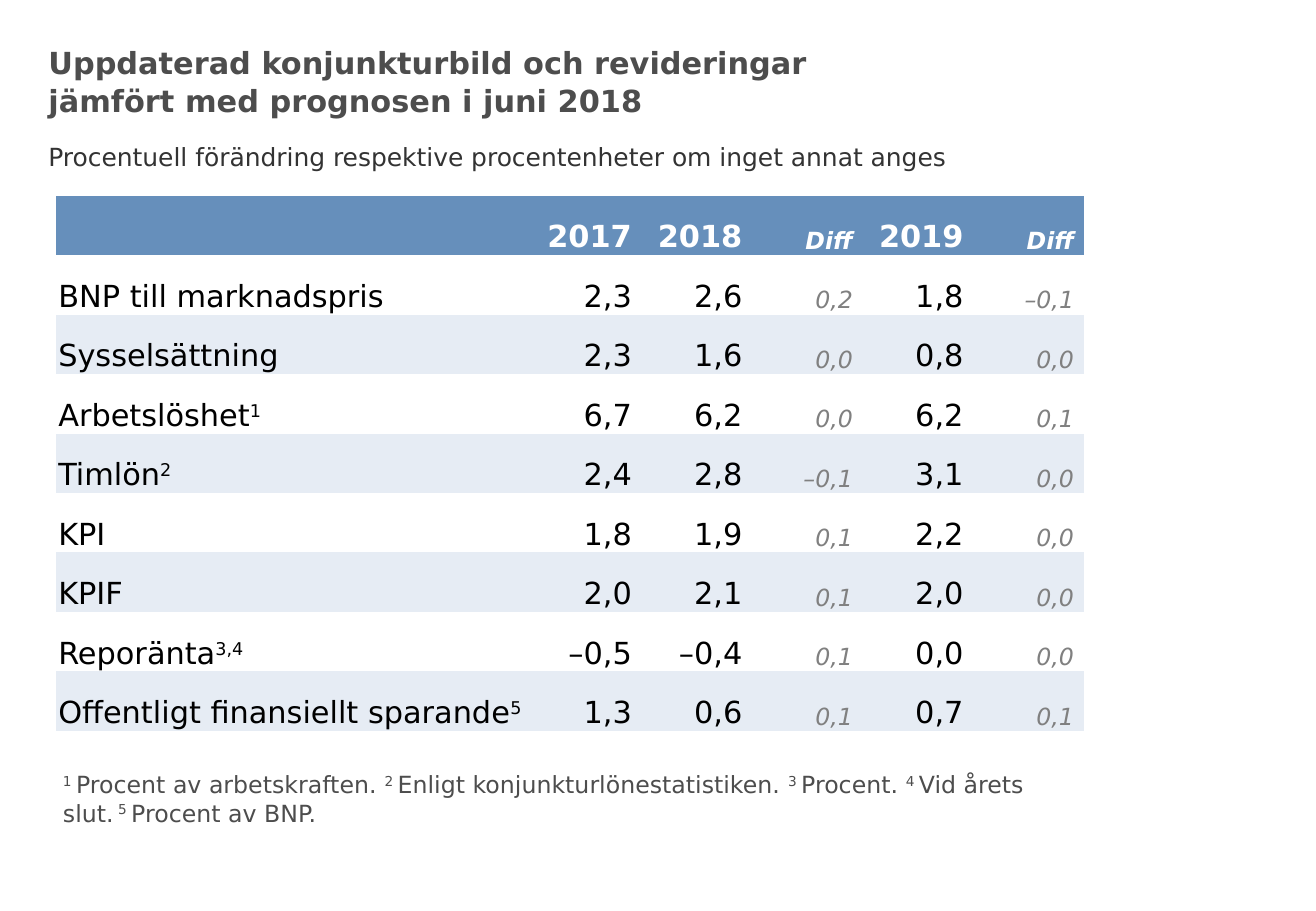
from pptx import Presentation
from pptx.dml.color import RGBColor
from pptx.enum.text import MSO_ANCHOR, PP_ALIGN
from pptx.oxml.ns import qn
from pptx.util import Pt

FONT = "DejaVu Sans"
COLORS = {
    "title": "4D4D4D", "subtitle": "333333", "note": "4D4D4D",
    "header": "668FBB", "header_text": "FFFFFF",
    "plain": "FFFFFF", "band": "E6ECF4",
    "value": "000000", "diff": "808080",
}
TITLE = "Uppdaterad konjunkturbild och revideringar jämfört med prognosen i juni 2018"
SUBTITLE = "Procentuell förändring respektive procentenheter om inget annat anges"
HEADER = ("", "2017", "2018", "Diff", "2019", "Diff")
# Label, superscript note number, values
ROWS = [
    ("BNP till marknadspris", "", "2,3", "2,6", "0,2", "1,8", "–0,1"),
    ("Sysselsättning", "", "2,3", "1,6", "0,0", "0,8", "0,0"),
    ("Arbetslöshet", "1", "6,7", "6,2", "0,0", "6,2", "0,1"),
    ("Timlön", "2", "2,4", "2,8", "–0,1", "3,1", "0,0"),
    ("KPI", "", "1,8", "1,9", "0,1", "2,2", "0,0"),
    ("KPIF", "", "2,0", "2,1", "0,1", "2,0", "0,0"),
    ("Reporänta", "3,4", "–0,5", "–0,4", "0,1", "0,0", "0,0"),
    ("Offentligt finansiellt sparande", "5", "1,3", "0,6", "0,1", "0,7", "0,1"),
]
# Superscript mark, note text
NOTES = [
    ("1 ", "Procent av arbetskraften. "),
    ("2 ", "Enligt konjunkturlönestatistiken. "),
    ("3 ", "Procent. "),
    ("4 ", "Vid årets slut."),
    (" 5 ", "Procent av BNP."),
]

PX = 9144  # EMU per px, 100 px to the inch
SLIDE_W, SLIDE_H = 1083, 750
TABLE_X, TABLE_Y = 46, 161
LABEL_W, VALUE_W, ROW_H = 391, 91, 49
LABEL_INDENT, VALUE_INDENT = 2, 8
NO_STYLE = "{2D5ABB26-0587-4C30-8999-92F81FD0307C}"


def px(n):
    return n * PX


def write(p, runs, size, color, bold=False, italic=False):
    """Fill a paragraph with (text, is_superscript) runs in one font."""
    for text, raised in runs:
        r = p.add_run()
        r.text = text
        if raised:
            r._r.get_or_add_rPr().set("baseline", "30000")
    p.font.name, p.font.size = FONT, Pt(size)
    p.font.bold, p.font.italic = bold, italic
    p.font.color.rgb = RGBColor.from_string(COLORS[color])


def add_text(s, box, runs, size, color, bold=False):
    tf = s.shapes.add_textbox(*map(px, box)).text_frame
    tf.word_wrap = True
    p = tf.paragraphs[0]
    write(p, runs, size, color, bold)
    return p


def fill_cell(cell, fill, col, runs, color, bold=False):
    cell.fill.solid()
    cell.fill.fore_color.rgb = RGBColor.from_string(COLORS[fill])
    cell.vertical_anchor = MSO_ANCHOR.BOTTOM
    cell.margin_top = cell.margin_bottom = 0
    cell.margin_left = px(0 if col else LABEL_INDENT)
    cell.margin_right = px(VALUE_INDENT if col else 0)
    if not runs:
        return
    p = cell.text_frame.paragraphs[0]
    p.alignment = PP_ALIGN.RIGHT if col else PP_ALIGN.LEFT
    p.line_spacing, p.space_after = Pt(10), Pt(1)
    is_diff = HEADER[col] == "Diff"
    write(p, runs, 14 if is_diff else 18, color, bold, is_diff)


def add_forecast_table(s):
    n_rows, n_cols = len(ROWS) + 2, len(HEADER)  # header and an empty last row
    width = LABEL_W + (n_cols - 1) * VALUE_W
    table = s.shapes.add_table(n_rows, n_cols, px(TABLE_X), px(TABLE_Y),
                               px(width), px(n_rows * ROW_H)).table
    table.first_row = table.horz_banding = False
    table._tbl.tblPr.find(qn("a:tableStyleId")).text = NO_STYLE
    for col, column in enumerate(table.columns):
        column.width = px(VALUE_W if col else LABEL_W)
    for col, text in enumerate(HEADER):
        runs = [(text, False)] if text else []
        fill_cell(table.cell(0, col), "header", col, runs, "header_text", True)
        fill_cell(table.cell(n_rows - 1, col), "plain", col, [], "value")
    for row, (label, mark, *values) in enumerate(ROWS, 1):
        label_runs = [(label, False)] + ([(mark, True)] if mark else [])
        for col, runs in enumerate([label_runs] + [[(v, False)] for v in values]):
            color = "diff" if HEADER[col] == "Diff" else "value"
            fill_cell(table.cell(row, col), "plain" if row % 2 else "band",
                      col, runs, color)


def main():
    prs = Presentation()
    prs.slide_width, prs.slide_height = px(SLIDE_W), px(SLIDE_H)
    s = prs.slides.add_slide(prs.slide_layouts[6])
    title = add_text(s, (30, 30, 750, 77), [(TITLE, False)], 18, "title", True)
    title.line_spacing = 1.05
    add_text(s, (30, 112, 772, 35), [(SUBTITLE, False)], 14.8, "subtitle")
    add_forecast_table(s)
    note_runs = [run for mark, text in NOTES for run in ((mark, True), (text, False))]
    add_text(s, (42, 629, 843, 35), note_runs, 14, "note")
    prs.save("out.pptx")


if __name__ == "__main__":
    main()
